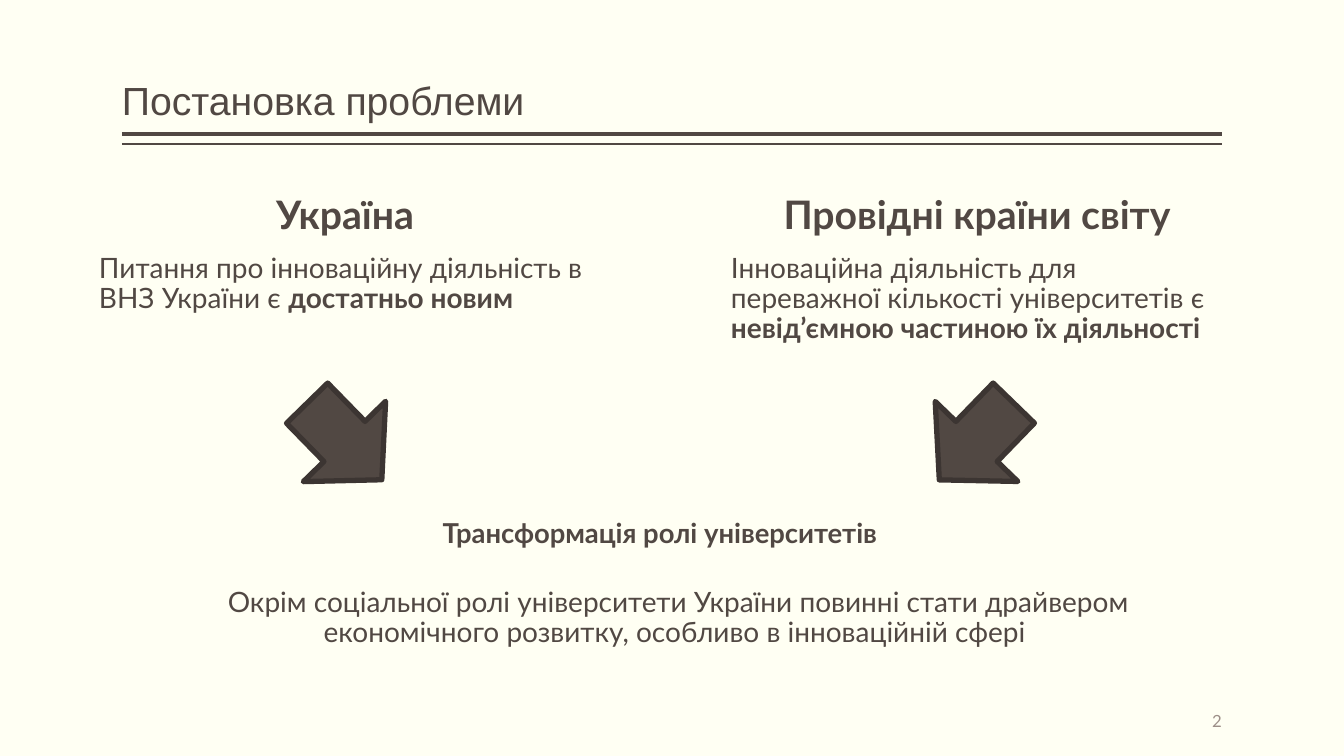
from lxml.etree import SubElement
from pptx import Presentation
from pptx.dml.color import RGBColor
from pptx.enum.shapes import MSO_CONNECTOR as CONNECTOR, MSO_SHAPE as SHAPE
from pptx.enum.text import MSO_ANCHOR as ANCHOR, PP_ALIGN as ALIGN
from pptx.oxml.ns import qn
from pptx.util import Pt

SCALE = 914400 / 100.8
COLORS = {"page": "FFFFF3", "ink": "514843", "edge": "3C3532", "muted": "9D8F88"}


def emu(*lengths):
    """Turn px lengths into EMU."""
    return [round(length * SCALE) for length in lengths]


def color(name):
    """Return a named colour."""
    return RGBColor.from_string(COLORS[name])


def add_text(page, box, spans, size=20, font="Lato", ink="ink", align=ALIGN.LEFT,
             anchor=ANCHOR.TOP, spacing=0.9):
    """Place one paragraph made of (text, bold) spans in a box."""
    frame = page.shapes.add_textbox(*emu(*box)).text_frame
    left, top = emu(0, 5)
    settings = {"word_wrap": True, "vertical_anchor": anchor, "margin_left": left,
                "margin_right": left, "margin_top": top, "margin_bottom": top}
    for name, value in settings.items():
        setattr(frame, name, value)
    para = frame.paragraphs[0]
    para.alignment, para.line_spacing = align, spacing
    for text, bold in spans:
        span = para.add_run()
        span.text = text
        for name, value in {"size": Pt(size), "name": font, "bold": bold}.items():
            setattr(span.font, name, value)
        span.font.color.rgb = color(ink)


def add_header(page, box, title):
    """Draw the title with its thick and thin rules below."""
    left, top, width, height = box
    add_text(page, box, [(title, False)], size=28, font="Arial", anchor=ANCHOR.BOTTOM)
    for gap, weight in ((5, 3), (15, 1)):
        y = top + height + gap
        rule = page.shapes.add_connector(CONNECTOR.STRAIGHT, *emu(left, y, left + width, y))
        rule.line.color.rgb, rule.line.width = color("ink"), Pt(weight)
        SubElement(rule._element.spPr, qn("a:effectLst"))


def add_column(page, box, heading, spans, angle):
    """Draw a heading, its text and an arrow turned by an angle."""
    left, top, width, height = box
    add_text(page, (left, top, width, 57), [(heading, True)], size=28, align=ALIGN.CENTER)
    add_text(page, (left, top + 58, width, 115), spans)
    arrow = page.shapes.add_shape(SHAPE.RIGHT_ARROW,
                                  *emu(left + 192, top + height - 115, 107, 115))
    arrow.rotation = angle
    arrow.shadow.inherit = False
    arrow.fill.solid()
    arrow.fill.fore_color.rgb = color("ink")
    arrow.line.color.rgb, arrow.line.width = color("edge"), Pt(3.78)
    SubElement(arrow.line._get_or_add_ln(), qn("a:round"))


def add_conclusion(page, box, heading, text):
    """Draw the closing heading and the text below it."""
    left, top, width, height = box
    add_text(page, (left + 221, top, 492, 57), [(heading, True)], size=19.6,
             align=ALIGN.CENTER, spacing=0.7)
    add_text(page, (left, top + 63, width, height - 63), [(text, False)], align=ALIGN.CENTER)


def main():
    """Build the slide and save the deck."""
    deck = Presentation()
    deck.slide_width, deck.slide_height = emu(1344, 756)
    page = deck.slides.add_slide(deck.slide_layouts[6])
    page.background.fill.solid()
    page.background.fill.fore_color.rgb = color("page")
    add_header(page, (122, 8, 1100, 121), "Постановка проблеми")
    columns = (
        (99, "Україна", 45.7,
         [("Питання про інноваційну діяльність в ВНЗ України є ", False),
          ("достатньо новим", True)]),
        (731, "Провідні країни світу", 134.1,
         [("Інноваційна діяльність для переважної кількості університетів є ", False),
          ("невід’ємною частиною їх діяльності", True)]),
    )
    for left, heading, angle, spans in columns:
        add_column(page, (left, 191, 492, 308), heading, spans, angle)
    add_conclusion(page, (193, 520, 971, 178), "Трансформація ролі університетів",
                   "Окрім соціальної ролі університети України повинні стати драйвером "
                   "економічного розвитку, особливо в інноваційній сфері ")
    add_text(page, (1020, 701, 202, 40), [("2", False)], size=12, ink="muted",
             align=ALIGN.RIGHT, anchor=ANCHOR.MIDDLE, spacing=1.0)
    deck.save("out.pptx")


if __name__ == "__main__":
    main()
